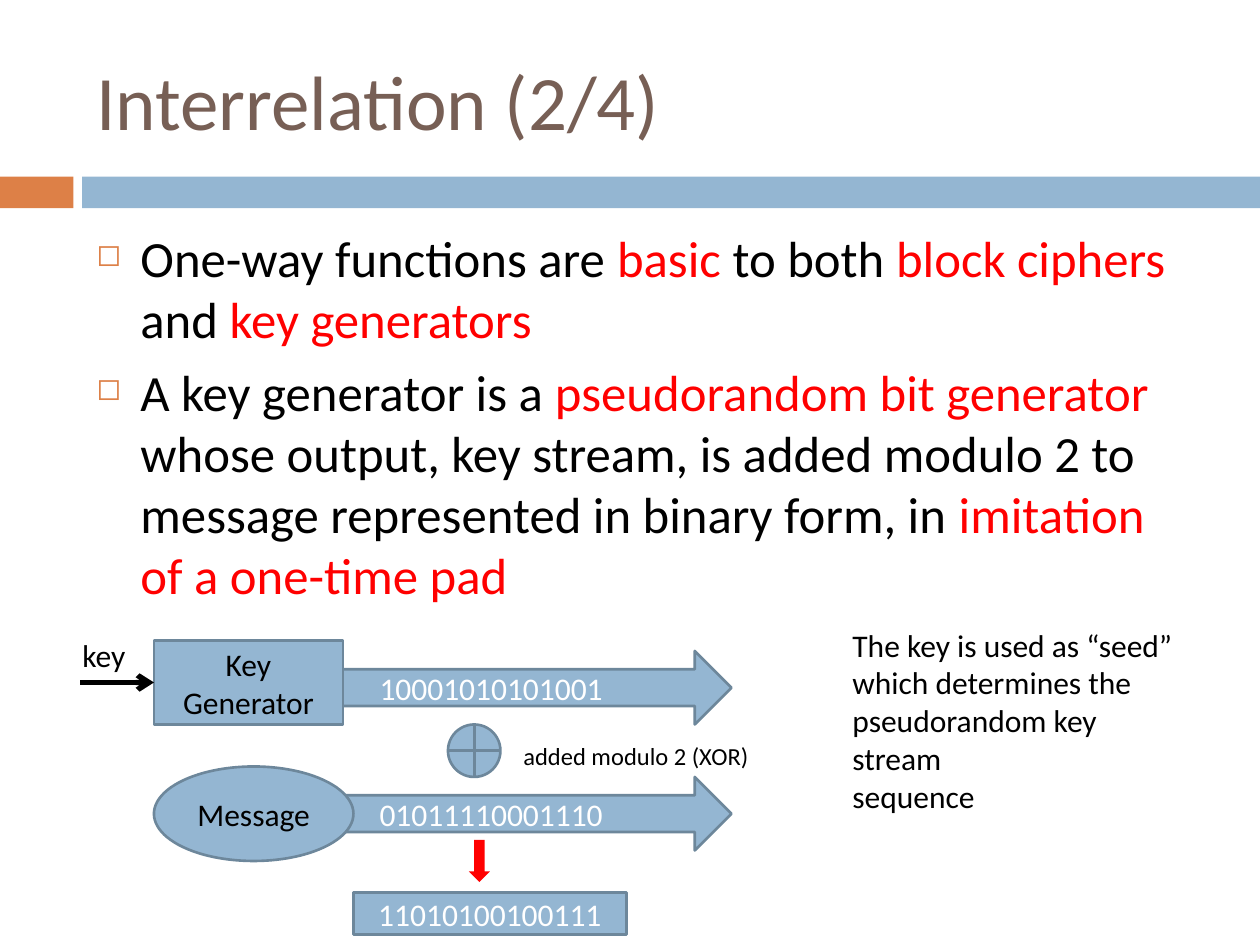
from lxml.etree import SubElement
from pptx import Presentation
from pptx.dml.color import RGBColor
from pptx.enum.shapes import MSO_CONNECTOR, MSO_SHAPE
from pptx.enum.text import MSO_ANCHOR, PP_ALIGN
from pptx.oxml.ns import qn
from pptx.util import Pt

FONT = "Calibri"
BLACK = RGBColor(0x00, 0x00, 0x00)
WHITE = RGBColor(0xFF, 0xFF, 0xFF)
RED = RGBColor(0xFF, 0x00, 0x00)
BLUE = RGBColor(0x94, 0xB6, 0xD2)
EDGE = RGBColor(0x6D, 0x87, 0x9B)
ORANGE = RGBColor(0xDD, 0x80, 0x47)
BROWN = RGBColor(0x77, 0x5F, 0x55)

# Each bullet is a list of (text, colour) runs
BULLETS = [
    [("One-way functions are ", BLACK), ("basic", RED), (" to both ", BLACK),
     ("block ciphers ", RED), ("and ", BLACK), ("key generators", RED)],
    [("A key generator is a ", BLACK), ("pseudorandom bit generator ", RED),
     ("whose output, key stream, is added modulo 2 to message represented "
      "in binary form, in ", BLACK), ("imitation of a one-time pad", RED)],
]
NOTE = ["The key is used as “seed”", "which determines the",
        "pseudorandom key stream", "sequence"]


def style(para, size, color):
    para.font.name = FONT
    para.font.size = Pt(size)
    para.font.color.rgb = color


def add_text(slide, box, lines, size, color=BLACK, wrap=True,
             anchor=MSO_ANCHOR.TOP):
    frame = slide.shapes.add_textbox(*map(Pt, box)).text_frame
    frame.word_wrap = wrap
    frame.vertical_anchor = anchor
    frame.text = "\n".join(lines)
    for para in frame.paragraphs:
        style(para, size, color)


def add_part(slide, kind, box, text="", color=BLACK, fill=BLUE, edge=EDGE):
    part = slide.shapes.add_shape(kind, *map(Pt, box))
    part.shadow.inherit = False
    part.fill.solid()
    part.fill.fore_color.rgb = fill
    if edge is None:
        part.line.fill.background()
    else:
        part.line.color.rgb = edge
        part.line.width = Pt(1.5)
    if text:
        frame = part.text_frame
        frame.text = text
        frame.vertical_anchor = MSO_ANCHOR.MIDDLE
        frame.paragraphs[0].alignment = PP_ALIGN.CENTER
        style(frame.paragraphs[0], 18, color)
    return part


def add_bands(slide, x, y, width, height):
    split, gap = 42, 5
    for left, right, fill in ((0, split, ORANGE), (split + gap, width, BLUE)):
        add_part(slide, MSO_SHAPE.RECTANGLE, (x + left, y, right - left, height),
                 fill=fill, edge=None)


def add_bullets(slide, box, items):
    frame = slide.shapes.add_textbox(*map(Pt, box)).text_frame
    frame.word_wrap = True
    for i, runs in enumerate(items):
        para = frame.paragraphs[0] if i == 0 else frame.add_paragraph()
        para.space_before = Pt(7)
        para.font.name = FONT
        para.font.size = Pt(29)
        for text, color in runs:
            run = para.add_run()
            run.text = text
            run.font.color.rgb = color
        # Hollow square bullet
        props = para._p.get_or_add_pPr()
        props.set("marL", str(Pt(25.2)))
        props.set("indent", str(-Pt(25.2)))
        marks = [SubElement(props, qn(tag))
                 for tag in ("a:buClr", "a:buSzPct", "a:buChar")]
        SubElement(marks[0], qn("a:srgbClr")).set("val", str(ORANGE))
        marks[1].set("val", "60000")
        marks[2].set("char", "◻")
        # Run defaults must follow the bullet marks
        props.append(props.find(qn("a:defRPr")))


def add_arrow(slide, x, y, end):
    line = slide.shapes.add_connector(
        MSO_CONNECTOR.STRAIGHT, Pt(x), Pt(y), end.left, Pt(y))
    line.end_connect(end, 1)
    line.line.color.rgb = BLACK
    line.line.width = Pt(3)
    SubElement(line.line._get_or_add_ln(), qn("a:tailEnd")).set("type", "arrow")
    SubElement(line._element.spPr, qn("a:effectLst"))


def add_cipher(slide, x, y):
    # Bit streams
    for top, bits in ((12, "10001010101001"), (84, "01011110001110")):
        add_part(slide, MSO_SHAPE.RIGHT_ARROW, (x + 114, y + top, 264, 42),
                 bits, WHITE)
    # Sources of the streams
    add_part(slide, MSO_SHAPE.OVAL, (x + 48, y + 78, 114, 54), "Message")
    maker = add_part(slide, MSO_SHAPE.RECTANGLE, (x + 48, y + 6, 108, 48),
                     "Key Generator")
    # Key input
    add_arrow(slide, x + 6, y + 30, maker)
    add_text(slide, (x, y, 40, 29), ["key"], 18, wrap=False)
    # XOR step and its result
    add_part(slide, MSO_SHAPE.FLOWCHART_OR, (x + 216, y + 54, 30, 30))
    add_text(slide, (x + 252, y + 60, 146, 24), ["added modulo 2 (XOR)"], 14,
             wrap=False)
    add_part(slide, MSO_SHAPE.RECTANGLE, (x + 162, y + 150, 156, 24),
             "11010100100111", WHITE)
    add_part(slide, MSO_SHAPE.DOWN_ARROW, (x + 228, y + 120, 12, 24),
             fill=RED, edge=None)


def main():
    deck = Presentation()
    deck.slide_width, deck.slide_height = Pt(720), Pt(540)
    slide = deck.slides.add_slide(deck.slide_layouts[6])
    add_bands(slide, 0, 101, 720, 18)
    add_text(slide, (48, 18, 642, 78), ["Interrelation (2/4)"], 44, BROWN,
             anchor=MSO_ANCHOR.MIDDLE)
    add_bullets(slide, (48, 126, 642, 354), BULLETS)
    add_text(slide, (480, 354, 204, 94), NOTE, 18)
    add_cipher(slide, 40, 360)
    deck.save("out.pptx")


if __name__ == "__main__":
    main()
